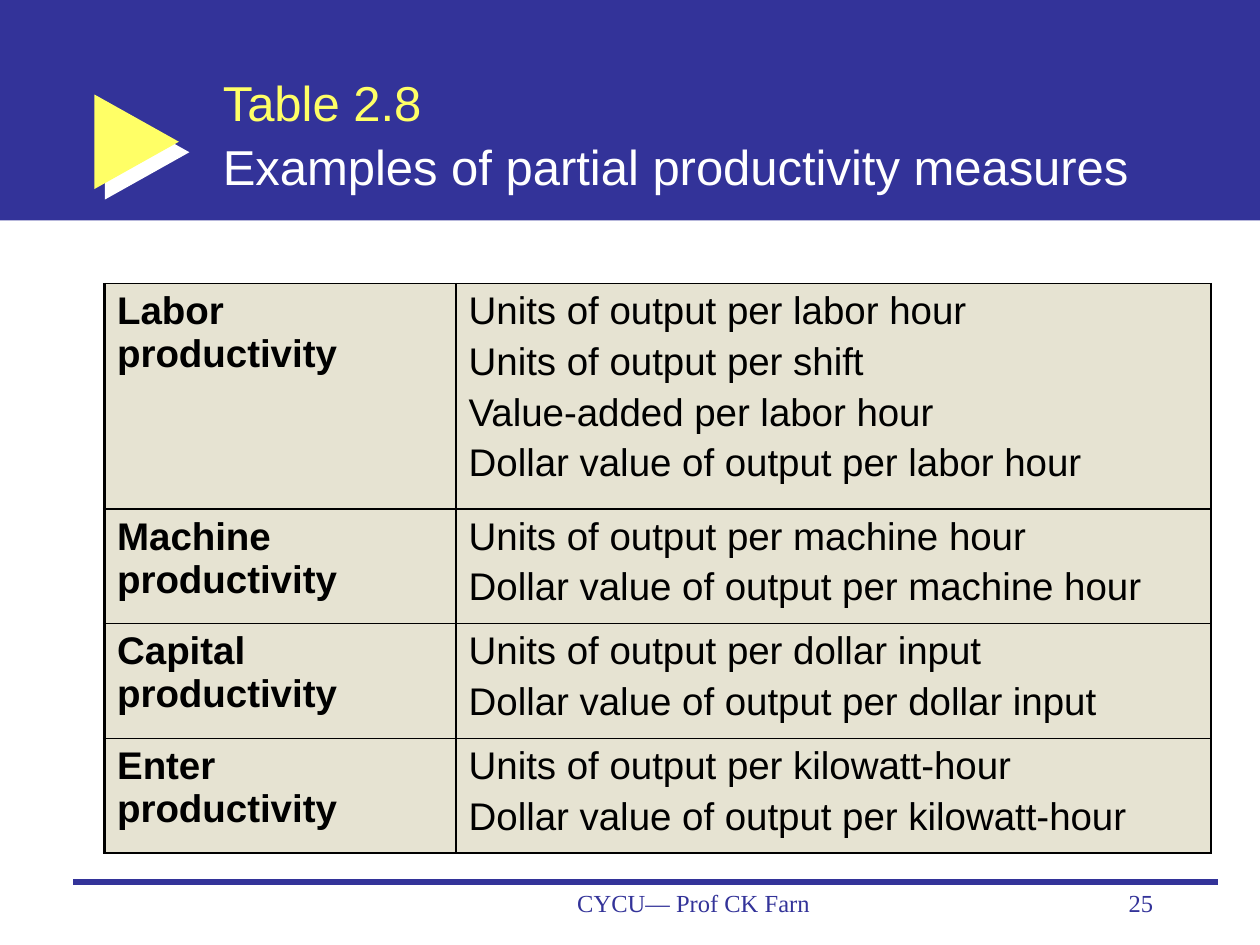
"""Build the slide with Table 2.8, examples of partial productivity measures."""
from lxml.etree import SubElement
from pptx import Presentation
from pptx.dml.color import RGBColor
from pptx.enum.shapes import MSO_CONNECTOR, MSO_SHAPE
from pptx.enum.text import MSO_ANCHOR, PP_ALIGN
from pptx.oxml import parse_xml
from pptx.oxml.ns import nsdecls, qn
from pptx.util import Inches, Pt

NAVY = RGBColor(0x33, 0x33, 0x99)
YELLOW = RGBColor(0xFF, 0xFF, 0x66)
WHITE = RGBColor(0xFF, 0xFF, 0xFF)
BLACK = RGBColor(0, 0, 0)
SAND = RGBColor(0xE6, 0xE3, 0xD2)


def write(para, text, size=22, color=BLACK, name="Arial", bold=False):
    run = para.add_run()
    run.text = text
    font = run.font
    font.size, font.name, font.bold = Pt(size), name, bold
    font.color.rgb = color


def edge(cell, side, width):
    line = SubElement(cell._tc.get_or_add_tcPr(), qn("a:ln" + side), w=str(Pt(width)))
    fill = SubElement(line, qn("a:solidFill"))
    SubElement(fill, qn("a:srgbClr"), val=str(BLACK))


deck = Presentation()
deck.slide_width, deck.slide_height = Inches(10), Inches(7.5)
slide = deck.slides.add_slide(deck.slide_layouts[6])
shapes = slide.shapes

band = shapes.add_shape(MSO_SHAPE.RECTANGLE, 0, 0, Inches(10), Inches(1.75))
arrow = shapes.add_shape(
    MSO_SHAPE.RIGHT_ARROW, Inches(0.75), Inches(0.75), Inches(0.67), Inches(0.75))
arrow.adjustments[0], arrow.adjustments[1] = 0.38, 1
for shape, color in ((band, NAVY), (arrow, YELLOW)):
    shape.shadow.inherit = False
    shape.fill.solid()
    shape.fill.fore_color.rgb = color
    shape.line.fill.background()
glow = arrow._element.spPr.find(qn("a:effectLst"))
glow.append(parse_xml(
    f'<a:outerShdw {nsdecls("a")} dist="{Pt(8.5)}" dir="2700000" algn="ctr" '
    f'rotWithShape="0"><a:srgbClr val="{WHITE}"/></a:outerShdw>'))

rule = shapes.add_connector(
    MSO_CONNECTOR.STRAIGHT, Inches(0.58), Inches(7), Inches(9.67), Inches(7))
rule.line.color.rgb = NAVY
rule.line.width = Pt(3)
SubElement(rule._element.spPr, qn("a:effectLst"))

title = shapes.add_textbox(Inches(1.67), Inches(0.42), Inches(8.22), Inches(1.25)).text_frame
title.word_wrap = True
title.vertical_anchor = MSO_ANCHOR.MIDDLE
head = title.paragraphs[0]
head.line_spacing = 1.08
write(head, "Table 2.8", size=28, color=YELLOW)
head.add_line_break()
write(head, "Examples of partial productivity measures", size=28, color=WHITE)

rows = [
    ("Labor", ["Units of output per labor hour", "Units of output per shift",
               "Value-added per labor hour", "Dollar value of output per labor hour"]),
    ("Machine", ["Units of output per machine hour",
                 "Dollar value of output per machine hour"]),
    ("Capital", ["Units of output per dollar input",
                 "Dollar value of output per dollar input"]),
    ("Enter", ["Units of output per kilowatt-hour",
               "Dollar value of output per kilowatt-hour"]),
]
table = shapes.add_table(
    len(rows), 2, Inches(0.83), Inches(2.25), Inches(8.78), Inches(4.52)).table
table.first_row = table.horz_banding = False
for col, width in zip(table.columns, (2.79, 5.99)):
    col.width = Inches(width)
for i, (kind, units) in enumerate(rows):
    table.rows[i].height = Inches(0.91 if i else 1.79)
    for j, lines in enumerate(([f"{kind} productivity"], units)):
        cell = table.cell(i, j)
        for side in "LRTB":
            edge(cell, side, 2.25 if side == "L" and j == 0 else 1)
        cell.fill.solid()
        cell.fill.fore_color.rgb = SAND
        frame = cell.text_frame
        for n, text in enumerate(lines):
            para = frame.add_paragraph() if n else frame.paragraphs[0]
            if n:
                para.space_before = Pt(4.4)
            write(para, text, bold=j == 0)

for text, left, width, align in (
        ("CYCU— Prof CK Farn", 3.92, 3.17, PP_ALIGN.CENTER),
        ("25", 7.17, 2.08, PP_ALIGN.RIGHT)):
    foot = shapes.add_textbox(Inches(left), Inches(7), Inches(width), Inches(0.5)).text_frame
    foot.word_wrap = True
    foot.paragraphs[0].alignment = align
    write(foot.paragraphs[0], text, size=14, color=NAVY, name="Times New Roman")

deck.save("out.pptx")
